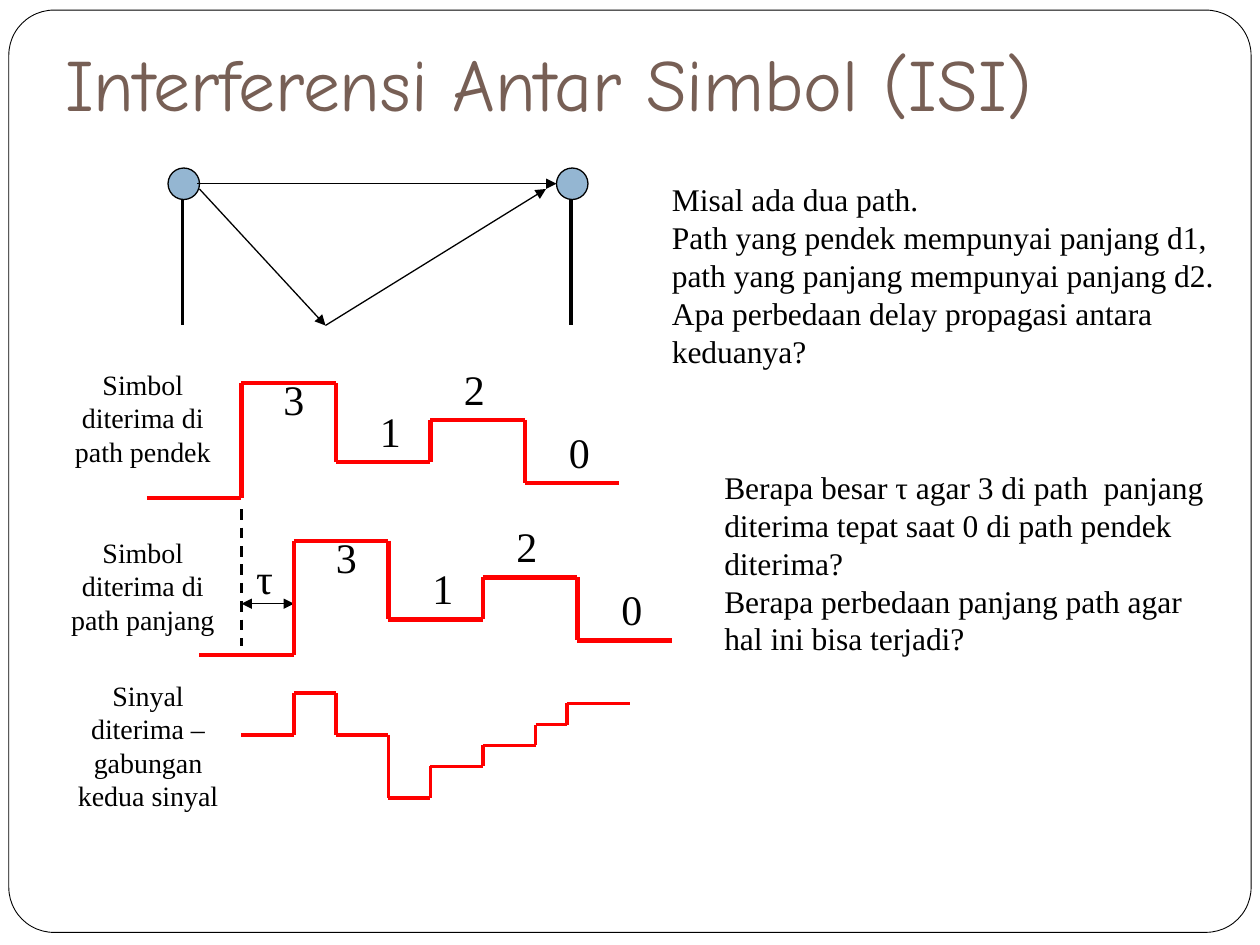
import itertools
from dataclasses import dataclass

import pptx
import pptx.dml.color
import pptx.enum.dml
import pptx.enum.shapes
import pptx.enum.text
import pptx.util
from lxml import etree
from pptx.oxml.ns import qn

COLUMNS, ROWS = 120, 90
SERIF = "Times New Roman"
BLACK, RED, WHITE, BLUE, BROWN = "000000", "FF0000", "FFFFFF", "94B6D2", "775F55"
SHAPE = pptx.enum.shapes.MSO_SHAPE
ALIGN = pptx.enum.text.PP_ALIGN
Point = tuple[float, float]


@dataclass(frozen=True)
class Label:
    """Text box placed in grid columns and rows."""
    column: float
    row: float
    width: float
    height: float
    paragraphs: tuple[str, ...]
    size: int
    align: ALIGN = ALIGN.LEFT
    wrap: bool = True


@dataclass(frozen=True)
class Stroke:
    start: Point
    end: Point
    color: str = BLACK
    width: float = 0.75
    head: bool = False
    tail: bool = False
    dashed: bool = False


@dataclass(frozen=True)
class Digit:
    text: str
    column: float
    row: float


deck = pptx.Presentation()
deck.slide_width, deck.slide_height = pptx.util.Inches(10), pptx.util.Inches(7.5)
page = deck.slides.add_slide(deck.slide_layouts[5])


def across(columns: float) -> int:
    return round(deck.slide_width * columns / COLUMNS)


def down(rows: float) -> int:
    return round(deck.slide_height * rows / ROWS)


def rgb(color: str) -> pptx.dml.color.RGBColor:
    return pptx.dml.color.RGBColor.from_string(color)


def place(column: float, row: float, width: float, height: float) -> tuple[int, ...]:
    return across(column), down(row), across(width), down(height)


def draw_shape(kind: SHAPE, box: tuple[int, ...], fill: str, line_width: float):
    shape = page.shapes.add_shape(kind, *box)
    shape.shadow.inherit = False
    shape.fill.solid()
    shape.fill.fore_color.rgb = rgb(fill)
    shape.line.color.rgb = rgb(BLACK)
    shape.line.width = pptx.util.Pt(line_width)
    return shape


def draw_stroke(stroke: Stroke) -> None:
    (x1, y1), (x2, y2) = stroke.start, stroke.end
    connector = page.shapes.add_connector(
        pptx.enum.shapes.MSO_CONNECTOR.STRAIGHT, across(x1), down(y1), across(x2), down(y2))
    line = connector.line
    line.color.rgb = rgb(stroke.color)
    line.width = pptx.util.Pt(stroke.width)
    if stroke.dashed:
        line.dash_style = pptx.enum.dml.MSO_LINE.DASH
    properties = connector.element.spPr
    for tag, wanted in (("a:headEnd", stroke.head), ("a:tailEnd", stroke.tail)):
        if wanted:
            etree.SubElement(properties.find(qn("a:ln")), qn(tag), type="triangle")
    etree.SubElement(properties, qn("a:effectLst"))


def draw_label(label: Label) -> None:
    box = page.shapes.add_textbox(*place(label.column, label.row, label.width, label.height))
    frame = box.text_frame
    frame.word_wrap = label.wrap
    frame.auto_size = pptx.enum.text.MSO_AUTO_SIZE.SHAPE_TO_FIT_TEXT
    frame.text = "\n".join(label.paragraphs)
    for para in frame.paragraphs:
        para.alignment = label.align
        para.font.name = SERIF
        para.font.size = pptx.util.Pt(label.size)
        para.font.color.rgb = rgb(BLACK)


def draw_signal(start: float, steps: list[Point], width: float) -> None:
    """Draw a staircase; each step is its level and the column where it ends."""
    corners = []
    for level, end in steps:
        corners += [(start, level), (end, level)]
        start = end
    for first, second in itertools.pairwise(corners):
        draw_stroke(Stroke(first, second, RED, width))


def draw_title(text: str) -> None:
    title = page.shapes.title
    title.left, title.top, title.width, title.height = place(5, 3, 112, 15)
    frame = title.text_frame
    frame.text = text
    frame.vertical_anchor = pptx.enum.text.MSO_ANCHOR.TOP
    frame.auto_size = pptx.enum.text.MSO_AUTO_SIZE.NONE
    para = frame.paragraphs[0]
    para.alignment = ALIGN.LEFT
    para.font.name = "Comic Neue"
    para.font.size = pptx.util.Pt(42)
    para.font.color.rgb = rgb(BROWN)


ANTENNAS = [(16, 17.4), (53, 54.4)]  # left of the ball, column of the mast
PATHS = [
    Stroke((18.8, 17.5), (53, 17.5), tail=True),
    Stroke((19, 18), (31, 31), tail=True),
    Stroke((31, 31), (52, 18), tail=True),
]
SYMBOL_STEPS = [(47.4, 23), (36.5, 32), (44, 41), (40, 50), (46, 59)]
SYMBOLS = [Digit("3", 25.8, 35), Digit("1", 35, 38), Digit("2", 43, 34), Digit("0", 53, 40)]
DELAYS = [(0, 0), (5, 15)]  # columns and rows from the short path's signal
SUM_STEPS = [(70, 28), (66, 32), (70, 37), (76, 41), (73, 46), (71, 51), (69, 54), (67, 60)]
LABELS = [
    Label(62.8, 16.6, 57.2, 19.2, (
        "Misal ada dua path.",
        "Path yang pendek mempunyai panjang d1, path yang panjang mempunyai panjang d2.",
        "Apa perbedaan delay propagasi antara keduanya?"), 18),
    Label(67.8, 44, 48.2, 19.2, (
        "Berapa besar τ agar 3 di path  panjang diterima tepat saat 0 di path pendek diterima?",
        "Berapa perbedaan panjang path agar hal ini bisa terjadi?"), 18),
    Label(5, 34.4, 17.2, 10.8, ("Simbol diterima di path pendek",), 16, ALIGN.CENTER),
    Label(5, 50.4, 17.2, 10.8, ("Simbol diterima di path panjang",), 16, ALIGN.CENTER),
    Label(6, 64, 16.2, 14, ("Sinyal diterima – gabungan kedua sinyal",), 16, ALIGN.CENTER),
    Label(23.2, 52, 4.2, 6, ("τ",), 24, wrap=False),
]
DELAY_MARKS = [
    Stroke((23, 48.5), (23, 61.5), width=1.5, dashed=True),
    Stroke((23, 57.5), (28, 57.5), head=True, tail=True),
]


def main() -> None:
    border = draw_shape(SHAPE.ROUNDED_RECTANGLE, place(0.84, 0.96, 118.32, 87.84), WHITE, 0.5)
    border.adjustments[0] = 0.049
    tree = page.shapes.title.element.getparent()
    tree.append(page.shapes.title.element)
    draw_title("Interferensi Antar Simbol (ISI)")

    for left, mast in ANTENNAS:
        draw_shape(SHAPE.OVAL, place(left, 16, 3, 3), BLUE, 0.75)
        draw_stroke(Stroke((mast, 19), (mast, 31), width=2))
    for stroke in PATHS + DELAY_MARKS:
        draw_stroke(stroke)

    for right, lower in DELAYS:
        draw_signal(14 + right, [(level + lower, end + right) for level, end in SYMBOL_STEPS], 2.5)
        for digit in SYMBOLS:
            draw_label(Label(digit.column + right, digit.row + lower, 4.4, 6,
                             (digit.text,), 24, wrap=False))
    draw_signal(23, SUM_STEPS, 2)
    for label in LABELS:
        draw_label(label)
    deck.save("out.pptx")


if __name__ == "__main__":
    main()
